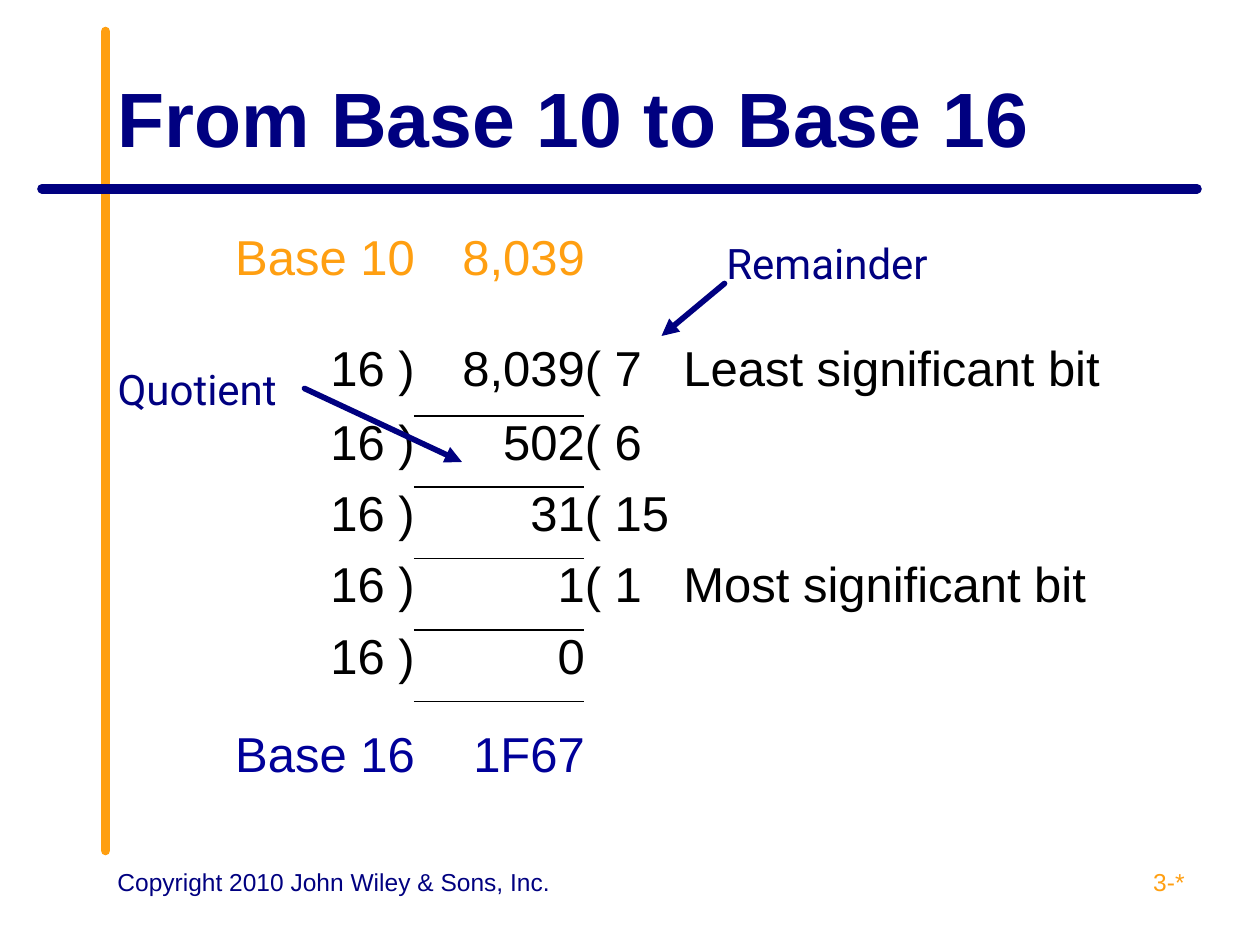
from dataclasses import dataclass

import lxml.etree
import pptx
import pptx.dml.color
import pptx.enum.shapes
import pptx.enum.text
import pptx.oxml.ns
import pptx.util

RGBColor = pptx.dml.color.RGBColor
NAVY = RGBColor(0x00, 0x00, 0x80)
BLUE = RGBColor(0x00, 0x00, 0x99)
ORANGE = RGBColor(0xFF, 0x9F, 0x11)
BLACK = RGBColor(0x00, 0x00, 0x00)
ALIGN = pptx.enum.text.PP_ALIGN
ANCHOR = pptx.enum.text.MSO_ANCHOR

# The slide is a grid of 120 columns by 90 rows.
COLUMNS, ROWS = 120, 90
CELL = pptx.util.Inches(10) // COLUMNS

DIVISIONS = [("8,039", "7", "Least significant bit"), ("502", "6", ""),
             ("31", "15", ""), ("1", "1", "Most significant bit"), ("0", "", "")]


def grid(count):
    return pptx.util.Emu(round(count * CELL))


@dataclass
class Box:
    left: float
    top: float
    width: float
    height: float

    def lengths(self):
        return [grid(n) for n in (self.left, self.top, self.width, self.height)]

    def point(self, across, down):
        """Return a point in grid units from its shares of the box."""
        return self.left + across * self.width, self.top + down * self.height


def add_element(parent, tag, **attributes):
    return lxml.etree.SubElement(parent, pptx.oxml.ns.qn(tag), **attributes)


def write(frame, text, size=28, font="Arial", color=BLACK, bold=False,
          align=ALIGN.LEFT, spacing=None, tab=None):
    """Put one formatted paragraph into a text frame."""
    para = frame.paragraphs[0]
    para.alignment = align
    if spacing:
        para.line_spacing = spacing
    if tab:
        tabs = add_element(para._p.get_or_add_pPr(), "a:tabLst")
        add_element(tabs, "a:tab", pos=str(grid(tab)), algn="l")
    span = para.add_run()
    span.text = text
    span.font.name = font
    span.font.size = pptx.util.Pt(size)
    span.font.bold = bold
    span.font.color.rgb = color


def add_label(page, box, text, inset=1.2, **style):
    label = page.shapes.add_textbox(*box.lengths())
    label.text_frame.word_wrap = True
    label.text_frame.margin_left = grid(inset)
    write(label.text_frame, text, **style)
    return label


def add_line(page, start, end, color, weight, arrow=False):
    line = page.shapes.add_connector(
        pptx.enum.shapes.MSO_CONNECTOR.STRAIGHT,
        *[grid(n) for n in (*start, *end)])
    line.line.color.rgb = color
    line.line.width = pptx.util.Pt(weight)
    stroke = line.line._get_or_add_ln()
    stroke.set("cap", "rnd")
    if arrow:
        add_element(stroke, "a:tailEnd", type="triangle")
    add_element(line._element.spPr, "a:effectLst")
    return line


def add_frame(page, box):
    """Draw the crossing rules around the slide."""
    add_line(page, box.point(0.055, 1), box.point(0.055, 0), ORANGE, 5.5)
    add_line(page, box.point(1, 0.192), box.point(0, 0.192), NAVY, 5.5)


def add_title(page, box):
    title = page.shapes.title
    title.left, title.top, title.width, title.height = box.lengths()
    frame = title.text_frame
    frame.auto_size = pptx.enum.text.MSO_AUTO_SIZE.NONE
    frame.vertical_anchor = ANCHOR.MIDDLE
    write(frame, "From Base 10 to Base 16", size=44, color=NAVY, bold=True)


def add_border(cell, *sides):
    properties = cell._tc.get_or_add_tcPr()
    for position, side in enumerate(sides):
        edge = lxml.etree.Element(pptx.oxml.ns.qn(side), w="12700")
        fill = add_element(edge, "a:solidFill")
        add_element(fill, "a:srgbClr", val=str(BLACK))
        properties.insert(position, edge)


def add_divisions(page, box):
    """Lay out repeated division by 16 between the two numbers."""
    rows = [("Base 10", "8,039", "", ORANGE, None)]
    for index, (number, remainder, note) in enumerate(DIVISIONS):
        result = f"( {remainder}" if remainder else ""
        if note:
            result += "\t" + note
        rows.append(("16 )", number, result, BLACK, 1.5 if index == 0 else None))
    rows.append(("Base 16", "1F67", "", BLUE, 1.5))

    shape = page.shapes.add_table(len(rows), 3, *box.lengths())
    table = shape.table
    table.first_row = table.horz_banding = False
    for column, share in zip(table.columns, (0.232, 0.174, 0.594)):
        column.width = grid(box.width * share)
    heights = [8, 9.6] + [6.8] * (len(DIVISIONS) - 1) + [11]
    for row, height in zip(table.rows, heights):
        row.height = grid(height)

    for r, (*texts, color, spacing) in enumerate(rows):
        for c, text in enumerate(texts):
            cell = table.cell(r, c)
            cell.fill.background()
            cell.margin_left = cell.margin_right = 0
            cell.margin_top = cell.margin_bottom = 0
            if text:
                write(cell.text_frame, text, color=color, spacing=spacing,
                      align=ALIGN.LEFT if c == 2 else ALIGN.RIGHT,
                      tab=9.4 if "\t" in text else None)
        if 0 < r <= len(DIVISIONS):
            sides = ("a:lnB",) if r == 1 else ("a:lnT", "a:lnB")
            add_border(table.cell(r, 1), *sides)
    add_border(table.cell(len(rows) - 1, 1), "a:lnT")


def add_quotient(page, box):
    label = add_label(page, box, "Quotient", inset=3.2, size=24,
                      font="Roboto", color=NAVY)
    arrow = add_line(page, box.point(1, 0.5), (44, 44), NAVY, 3.25, arrow=True)
    arrow.begin_connect(label, 3)


def add_remainder(page, box):
    add_label(page, box, "Remainder", size=24, font="Roboto", color=NAVY)
    add_line(page, (box.left + 1, box.top + 5), (box.left - 5, box.top + 10),
             NAVY, 3.25, arrow=True)


def add_footer(page, box):
    number = Box(box.left + box.width - 28, box.top, 28, box.height)
    notice = Box(box.left, box.top, 44, box.height)
    add_label(page, number, "3-*", size=14, color=ORANGE, align=ALIGN.RIGHT)
    add_label(page, notice, "Copyright 2010 John Wiley & Sons, Inc.",
              size=14, color=NAVY)


def main():
    deck = pptx.Presentation()
    deck.slide_width, deck.slide_height = grid(COLUMNS), grid(ROWS)
    page = deck.slides.add_slide(deck.slide_layouts[5])
    add_frame(page, Box(4, 3, 110, 78))
    add_title(page, Box(10, 3.6, 104, 15))
    add_divisions(page, Box(17.9, 22, 93.1, 55.8))
    add_quotient(page, Box(8, 34, 21, 6))
    add_remainder(page, Box(68, 22, 24, 6))
    add_footer(page, Box(10, 82, 104, 6.2))
    deck.save("out.pptx")


if __name__ == "__main__":
    main()
